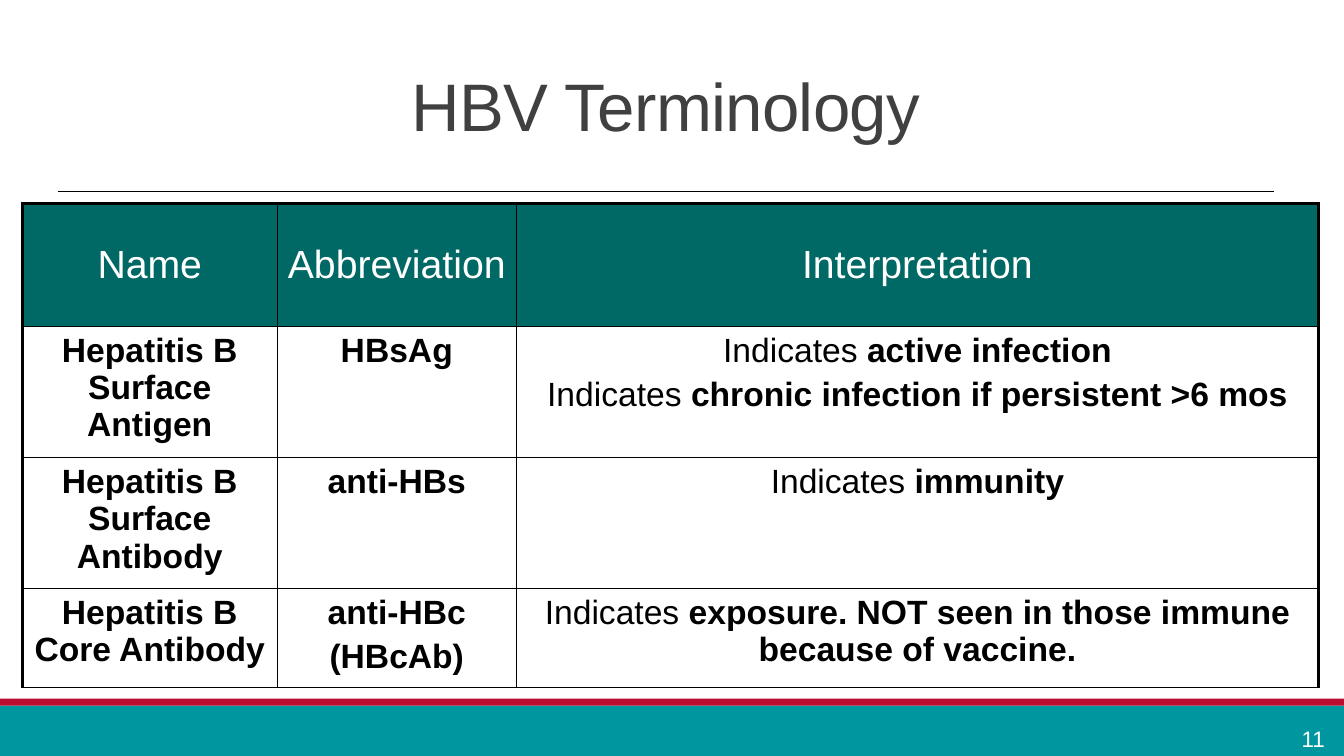
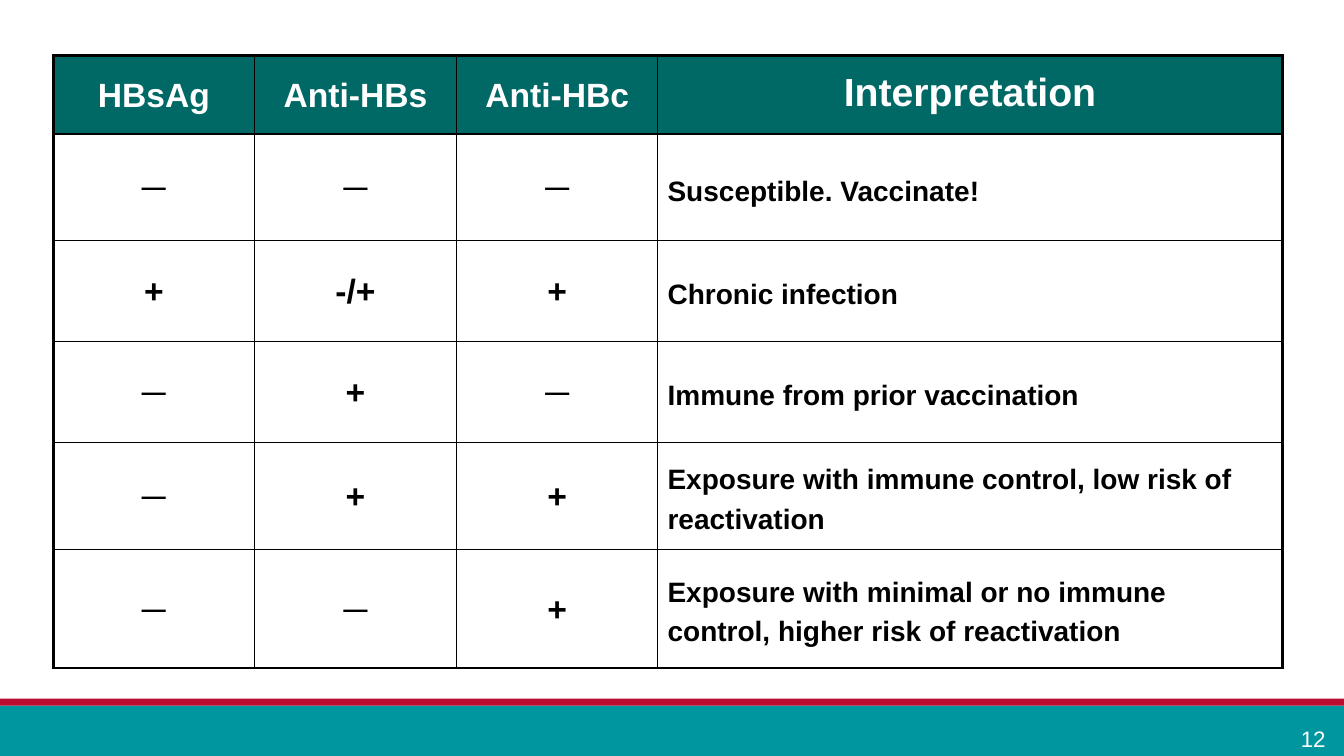
from dataclasses import dataclass, replace
from lxml import etree
from pptx import Presentation
from pptx import util as u
from pptx.dml.color import RGBColor
from pptx.enum import shapes, text
from pptx.oxml import ns

FONT = "Arial"
BLACK, WHITE, GREY = "000000", "FFFFFF", "404040"
TEAL, DARK_TEAL, RED = "00969F", "006865", "BA0C2F"
THIN, THICK = 1, 2.25
FIRST_NUMBER = 11

prs = Presentation()
prs.slide_width, prs.slide_height = u.Inches(13.33), u.Inches(7.5)
TITLE_ONLY, BLANK = prs.slide_layouts[5], prs.slide_layouts[6]


@dataclass(frozen=True)
class Box:
    """Percentages of the slide's width and height."""
    left: float
    top: float
    width: float
    height: float

    def emu(self) -> tuple[int, int, int, int]:
        return across(self.left), down(self.top), across(self.width), down(self.height)


@dataclass(frozen=True)
class Style:
    size: float
    color: str = BLACK
    bold: bool = False
    align: text.PP_ALIGN = text.PP_ALIGN.CENTER
    line: float | u.Length | None = None
    gap: float = 0


@dataclass(frozen=True)
class Band:
    box: Box
    color: str


@dataclass(frozen=True)
class Grid:
    left: float
    top: float
    cols: list[float]
    rows: list[float]
    head: list[Style]
    body: list[Style]
    body_anchor: text.MSO_ANCHOR
    bottom: float
    head_bottom: float
    cells: list[list[str]]


BANDS = [
    Band(Box(0, 93.33, 100, 6.67), TEAL),
    Band(Box(0, 92.4, 100, 0.93), RED),
]
TITLE_BOX = Box(4.28, 4.13, 90.55, 21.2)
NUMBER_BOX = Box(95.42, 95.2, 4.58, 5.33)
TITLE = Style(48, GREY, line=0.85)
NUMBER = Style(16, WHITE)


def across(percent: float) -> int:
    return round(prs.slide_width * percent / 100)


def down(percent: float) -> int:
    return round(prs.slide_height * percent / 100)


def rgb(color: str) -> RGBColor:
    return RGBColor.from_string(color)


def write(tf, content: str, style: Style) -> None:
    """Text between asterisks is set in regular weight."""
    for i, line in enumerate(content.split("\n")):
        p = tf.add_paragraph() if i else tf.paragraphs[0]
        p.alignment = style.align
        if style.line:
            p.line_spacing = style.line
        if i:
            p.space_before = u.Pt(style.gap)
        p.font.name, p.font.size, p.font.bold = FONT, u.Pt(style.size), style.bold
        p.font.color.rgb = rgb(style.color)
        for j, part in enumerate(line.split("*")):
            if part:
                r = p.add_run()
                r.text = part
                if j % 2:
                    r.font.bold = False


def add_band(s, band: Band) -> None:
    sp = s.shapes.add_shape(shapes.MSO_SHAPE.RECTANGLE, *band.box.emu())
    sp.shadow.inherit = False
    sp.fill.solid()
    sp.fill.fore_color.rgb = rgb(band.color)
    sp.line.fill.background()


def add_rule(s, box: Box) -> None:
    y = down(box.top + box.height)
    line = s.shapes.add_connector(
        shapes.MSO_CONNECTOR.STRAIGHT, across(box.left), y, across(box.left + box.width), y)
    line.line.color.rgb = rgb(BLACK)
    line.line.width = u.Pt(1)
    etree.SubElement(line._element.spPr, ns.qn("a:effectLst"))


def add_title(s, content: str) -> None:
    sp = s.shapes.title
    sp.left, sp.top, sp.width, sp.height = TITLE_BOX.emu()
    tf = sp.text_frame
    tf.vertical_anchor = text.MSO_ANCHOR.MIDDLE
    write(tf, content, TITLE)
    tf.paragraphs[0].runs[0]._r.get_or_add_rPr().set("spc", "-50")
    add_rule(s, TITLE_BOX)


def add_slide(layout, number: int):
    s = prs.slides.add_slide(layout)
    for band in BANDS:
        add_band(s, band)
    tf = s.shapes.add_textbox(*NUMBER_BOX.emu()).text_frame
    tf.word_wrap = True
    write(tf, str(number), NUMBER)
    return s


def set_borders(cell, widths: dict[str, float]) -> None:
    tc_pr = cell._tc.get_or_add_tcPr()
    for side, width in widths.items():
        ln = etree.SubElement(tc_pr, ns.qn(f"a:ln{side}"), w=str(u.Pt(width)))
        fill = etree.SubElement(ln, ns.qn("a:solidFill"))
        etree.SubElement(fill, ns.qn("a:srgbClr"), val=BLACK)


def add_grid(s, grid: Grid) -> None:
    box = Box(grid.left, grid.top, sum(grid.cols), sum(grid.rows))
    last_row, last_col = len(grid.rows) - 1, len(grid.cols) - 1
    table = s.shapes.add_table(last_row + 1, last_col + 1, *box.emu()).table
    table.first_row = table.horz_banding = False
    for column, width in zip(table.columns, grid.cols):
        column.width = across(width)
    for row, height in zip(table.rows, grid.rows):
        row.height = down(height)
    edges = [THICK, grid.head_bottom] + [THIN] * (last_row - 1) + [grid.bottom]
    for i, line in enumerate(grid.cells):
        for j, content in enumerate(line):
            cell = table.cell(i, j)
            set_borders(cell, {
                "L": THIN if j else THICK,
                "R": THICK if j == last_col else THIN,
                "T": edges[i],
                "B": edges[i + 1],
            })
            cell.fill.solid()
            cell.fill.fore_color.rgb = rgb(WHITE if i else DARK_TEAL)
            cell.vertical_anchor = grid.body_anchor if i else text.MSO_ANCHOR.MIDDLE
            write(cell.text_frame, content, (grid.body if i else grid.head)[j])


TERM_HEAD = Style(28, WHITE)
TERM_BODY = Style(24, bold=True, gap=4.8)
TERMS = Grid(
    left=1.65, top=26.93,
    cols=[18.98, 17.78, 59.71],
    rows=[16.27, 17.33, 17.33, 13.07],
    head=[TERM_HEAD] * 3,
    body=[TERM_BODY] * 3,
    body_anchor=text.MSO_ANCHOR.TOP,
    bottom=THIN, head_bottom=THIN,
    cells=[
        ["Name", "Abbreviation", "Interpretation"],
        ["Hepatitis B Surface Antigen", "HBsAg",
         "*Indicates *active infection\n"
         "*Indicates *chronic infection if persistent >6 mos"],
        ["Hepatitis B Surface Antibody", "anti-HBs", "*Indicates* immunity"],
        ["Hepatitis B Core Antibody", "anti-HBc\n(HBcAb)",
         "*Indicates *exposure. NOT seen in those immune because of vaccine."],
    ],
)

MARK = Style(24, bold=True, line=u.Pt(28))
MARK_HEAD = replace(MARK, color=WHITE)
MEANING = replace(MARK, size=20, align=text.PP_ALIGN.LEFT)
RESULTS = Grid(
    left=3.98, top=7.33,
    cols=[14.93, 15.08, 14.93, 46.51],
    rows=[10.4, 14.13, 13.33, 13.33, 14.13, 15.73],
    head=[MARK_HEAD] * 3 + [replace(MARK_HEAD, size=28)],
    body=[MARK] * 3 + [MEANING],
    body_anchor=text.MSO_ANCHOR.MIDDLE,
    bottom=THICK, head_bottom=THICK,
    cells=[
        ["HBsAg", "Anti-HBs", "Anti-HBc", "Interpretation"],
        ["─", "─", "─", "Susceptible. Vaccinate!"],
        ["+", "-/+", "+", "Chronic infection"],
        ["─", "+", "─", "Immune from prior vaccination"],
        ["─", "+", "+", "Exposure with immune control, low risk of reactivation"],
        ["─", "─", "+",
         "Exposure with minimal or no immune control, higher risk of reactivation"],
    ],
)


def main() -> None:
    s = add_slide(TITLE_ONLY, FIRST_NUMBER)
    add_title(s, "HBV Terminology")
    add_grid(s, TERMS)
    s = add_slide(BLANK, FIRST_NUMBER + 1)
    add_grid(s, RESULTS)
    prs.save("out.pptx")


if __name__ == "__main__":
    main()
